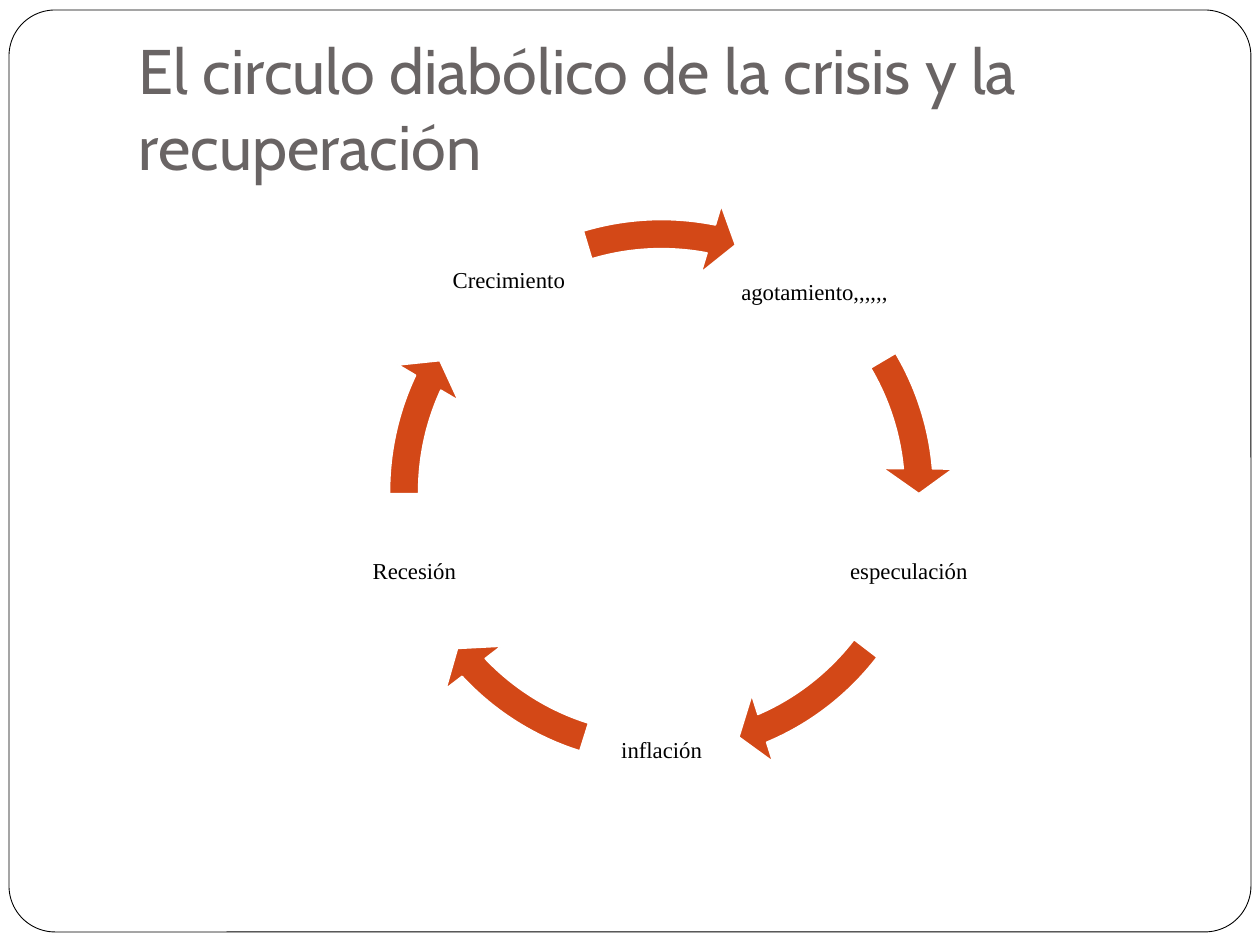
from math import cos, radians, sin

from pptx import Presentation
from pptx.dml.color import RGBColor
from pptx.enum.shapes import MSO_SHAPE as Kind
from pptx.enum.text import MSO_ANCHOR as Anchor, MSO_AUTO_SIZE as Fit, PP_ALIGN as Align
from pptx.util import Inches, Pt

STEPS = [
    ("agotamiento,,,,,,", 329.42, 354.91, 24),
    ("especulación", 37.54, 66.94, 0),
    ("inflación", 107.47, 136.87, 0),
    ("Recesión", 179.5, 204.99, 0),
    ("Crecimiento", 253.29, 281.12, 0),
]


def px(*vals):
    """Turn pixels into a list of EMU lengths."""
    return [round(v * Inches(1) / 126) for v in vals]


def tint(code):
    """Turn a hex string into a colour."""
    return RGBColor.from_string(code)


def style(para, font, size, color, align):
    """Format one paragraph."""
    para.font.name, para.font.size = font, Pt(size)
    para.font.color.rgb = tint(color)
    para.alignment = align


def inset(frame, left, top, right, low):
    """Set the inner margins of a text frame."""
    frame.margin_left, frame.margin_top, frame.margin_right, frame.margin_bottom = px(
        left, top, right, low)


def shape(parent, kind, box, fill, line, width):
    """Add a flat preset shape."""
    item = parent.shapes.add_shape(kind, *px(*box))
    item.shadow.inherit = False
    item.fill.solid()
    item.fill.fore_color.rgb = tint(fill)
    item.line.color.rgb = tint(line)
    item.line.width = Pt(width)
    return item


def border(slide, box):
    """Draw the rounded page frame behind the title."""
    item = shape(slide, Kind.ROUNDED_RECTANGLE, box, "FFFFFF", "000000", 0.5)
    item.adjustments[0] = 0.05
    slide.shapes.title.element.addprevious(item.element)


def heading(slide, box, text):
    """Place and format the title."""
    title = slide.shapes.title
    title.left, title.top, title.width, title.height = px(*box)
    frame = title.text_frame
    frame.text = text
    frame.word_wrap, frame.auto_size = True, Fit.NONE
    frame.vertical_anchor = Anchor.BOTTOM
    inset(frame, 13, 6, 13, 13)
    style(frame.paragraphs[0], "Cabin", 36, "696464", Align.LEFT)


def label(group, box, text, drop):
    """Add a centred step name, lowered by extra top margin."""
    frame = group.shapes.add_textbox(*px(*box)).text_frame
    frame.text = text
    frame.word_wrap = True
    frame.vertical_anchor = Anchor.MIDDLE
    inset(frame, 2, 2 + drop, 2, 2)
    para = frame.paragraphs[0]
    para.line_spacing = 0.9
    style(para, "Times New Roman", 13, "000000", Align.CENTER)


def arrow(group, box, start, end):
    """Add a curved arrow between two angles in degrees."""
    item = shape(group, Kind.CIRCULAR_ARROW, box, "D34817", "FFFFFF", 1)
    for i, val in enumerate((0.05, 5.59 * 0.6, end * 0.6, start * 0.6, 0.06)):
        item.adjustments[i] = val


def cycle(slide, box, steps):
    """Set the steps on a circle with an arrow after each."""
    left, top, wide, high = box
    radius, side = 260, 156
    group = slide.shapes.add_group_shape()
    for i, (text, start, end, drop) in enumerate(steps):
        turn = radians(-54 + i * 360 / len(steps))
        x = left + wide / 2 + radius * cos(turn) - side / 2
        y = top + high / 2 + radius * sin(turn) - side / 2
        label(group, (x, y, side, side), text, drop)
        arrow(group, box, start, end)


def main():
    """Build and save the slide."""
    deck = Presentation()
    deck.slide_width, deck.slide_height = px(1260, 945)
    slide = deck.slides.add_slide(deck.slide_layouts[5])
    border(slide, (9, 10, 1242, 922))
    heading(slide, (126, 38, 1071, 158), "El circulo diabólico de la crisis y la recuperación")
    cycle(slide, (369, 199, 585, 585), STEPS)
    deck.save("out.pptx")


if __name__ == "__main__":
    main()
